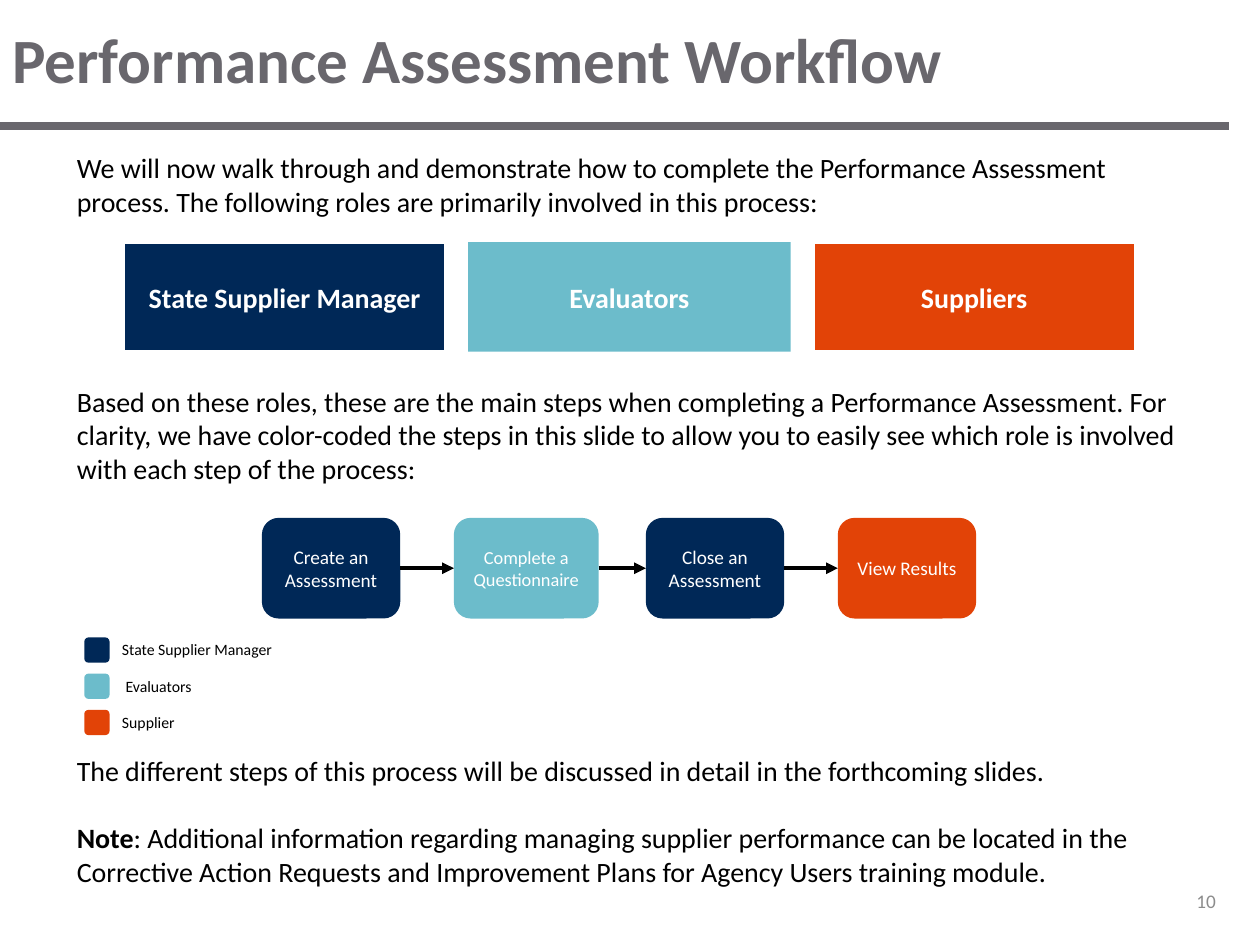
from dataclasses import dataclass
from lxml import etree
from pptx import Presentation
from pptx.dml.color import RGBColor
from pptx.enum.shapes import MSO_CONNECTOR as Line, MSO_SHAPE as Preset
from pptx.enum.text import MSO_ANCHOR as Anchor, PP_ALIGN as Align
from pptx.oxml.ns import qn
from pptx.util import Cm, Pt


@dataclass(frozen=True)
class Theme:
    font: str = "Calibri"
    grey: str = "69676D"
    page_grey: str = "8C8C8C"
    black: str = "000000"
    white: str = "FFFFFF"
    manager: str = "002857"
    evaluator: str = "6CBCCB"
    supplier: str = "E24307"
    title: float = 36
    body: float = 16
    step: float = 11
    small_step: float = 10.5
    legend: float = 9


theme = Theme()
deck = Presentation()
deck.slide_width, deck.slide_height = Cm(25.4), Cm(19.05)
slide = deck.slides.add_slide(deck.slide_layouts[6])
shapes = slide.shapes


def write(holder, text, size=theme.body, color=theme.black, bold=False,
          align=Align.LEFT, anchor=Anchor.TOP, gap=None):
    frame = holder.text_frame
    frame.word_wrap = True
    frame.vertical_anchor = anchor
    if gap is not None:
        frame.add_paragraph().space_before = Pt(gap)
    paragraph = frame.paragraphs[-1]
    paragraph.alignment = align
    run = paragraph.add_run()
    run.text = text
    run.font.name = theme.font
    run.font.size = Pt(size)
    run.font.bold = bold
    run.font.color.rgb = RGBColor.from_string(color)


def draw_block(preset, left, top, width, height, fill, outline=None):
    block = shapes.add_shape(preset, Cm(left), Cm(top), Cm(width), Cm(height))
    block.shadow.inherit = False
    block.fill.solid()
    block.fill.fore_color.rgb = RGBColor.from_string(fill)
    if outline:
        block.line.color.rgb = RGBColor.from_string(outline)
        block.line.width = Pt(2)
    else:
        block.line.fill.background()
    return block


title_rule = shapes.add_connector(Line.STRAIGHT, 0, Cm(2.54), Cm(24.77), Cm(2.54))
title_rule.line.color.rgb = RGBColor.from_string(theme.grey)
title_rule.line.width = Pt(5)
etree.SubElement(title_rule._element.spPr, qn("a:effectLst"))

title = shapes.add_textbox(0, 0, Cm(25.4), Cm(2.34))
write(title, "Performance Assessment Workflow", size=theme.title, color=theme.grey,
      bold=True, anchor=Anchor.MIDDLE)

page_number = shapes.add_textbox(Cm(18.21), Cm(17.65), Cm(6.55), Cm(1.02))
write(page_number, "10", size=theme.step, color=theme.page_grey,
      align=Align.RIGHT, anchor=Anchor.MIDDLE)

intro = shapes.add_textbox(Cm(1.3), Cm(2.92), Cm(22.83), Cm(1.63))
write(intro, "We will now walk through and demonstrate how to complete the Performance "
      "Assessment process. The following roles are primarily involved in this process:")

explanation = shapes.add_textbox(Cm(1.3), Cm(7.62), Cm(22.83), Cm(10.52))
write(explanation, "Based on these roles, these are the main steps when completing a "
      "Performance Assessment. For clarity, we have color-coded the steps in this slide to "
      "allow you to easily see which role is involved with each step of the process:")
write(explanation, "The different steps of this process will be discussed in detail in the "
      "forthcoming slides.", gap=153.5)
write(explanation, "Note", bold=True, gap=19.2)
write(explanation, ": Additional information regarding managing supplier performance can be "
      "located in the Corrective Action Requests and Improvement Plans for Agency Users "
      "training module.")

roles = [
    ("State Supplier Manager", theme.manager, theme.white),
    ("Evaluators", theme.evaluator, None),
    ("Suppliers", theme.supplier, theme.white),
]
for index, (role, fill, outline) in enumerate(roles):
    role_box = draw_block(Preset.RECTANGLE, 2.49 + index * 6.95, 4.88, 6.5, 2.21, fill, outline)
    write(role_box, role, color=theme.white, bold=True,
          align=Align.CENTER, anchor=Anchor.MIDDLE)

steps = [
    ("Create an Assessment", theme.manager, 2.79, theme.step),
    ("Complete a Questionnaire", theme.evaluator, 2.92, theme.small_step),
    ("Close an Assessment", theme.manager, 2.79, theme.step),
    ("View Results", theme.supplier, 2.79, theme.step),
]
step_boxes = []
for index, (step, fill, width, size) in enumerate(steps):
    step_box = draw_block(Preset.ROUNDED_RECTANGLE, 5.28 + index * 3.87, 10.44, width, 2.03, fill)
    write(step_box, step, size=size, color=theme.white,
          align=Align.CENTER, anchor=Anchor.MIDDLE)
    step_boxes.append(step_box)

for current, following in zip(step_boxes, step_boxes[1:]):
    arrow = shapes.add_connector(Line.STRAIGHT, 0, 0, 0, 0)
    arrow.begin_connect(current, 3)
    arrow.end_connect(following, 1)
    arrow.line.color.rgb = RGBColor.from_string(theme.black)
    arrow.line.width = Pt(2.25)
    etree.SubElement(arrow.line._get_or_add_ln(), qn("a:tailEnd"), type="triangle")
    etree.SubElement(arrow._element.spPr, qn("a:effectLst"))

legend = [
    ("State Supplier Manager", theme.manager),
    (" Evaluators", theme.evaluator),
    ("Supplier", theme.supplier),
]
for index, (role, fill) in enumerate(legend):
    top = 12.85 + index * 0.73
    draw_block(Preset.ROUNDED_RECTANGLE, 1.7, top, 0.51, 0.51, fill)
    legend_label = shapes.add_textbox(Cm(2.21), Cm(top - 0.07), Cm(4.9), Cm(0.64))
    write(legend_label, role, size=theme.legend)

deck.save("out.pptx")
